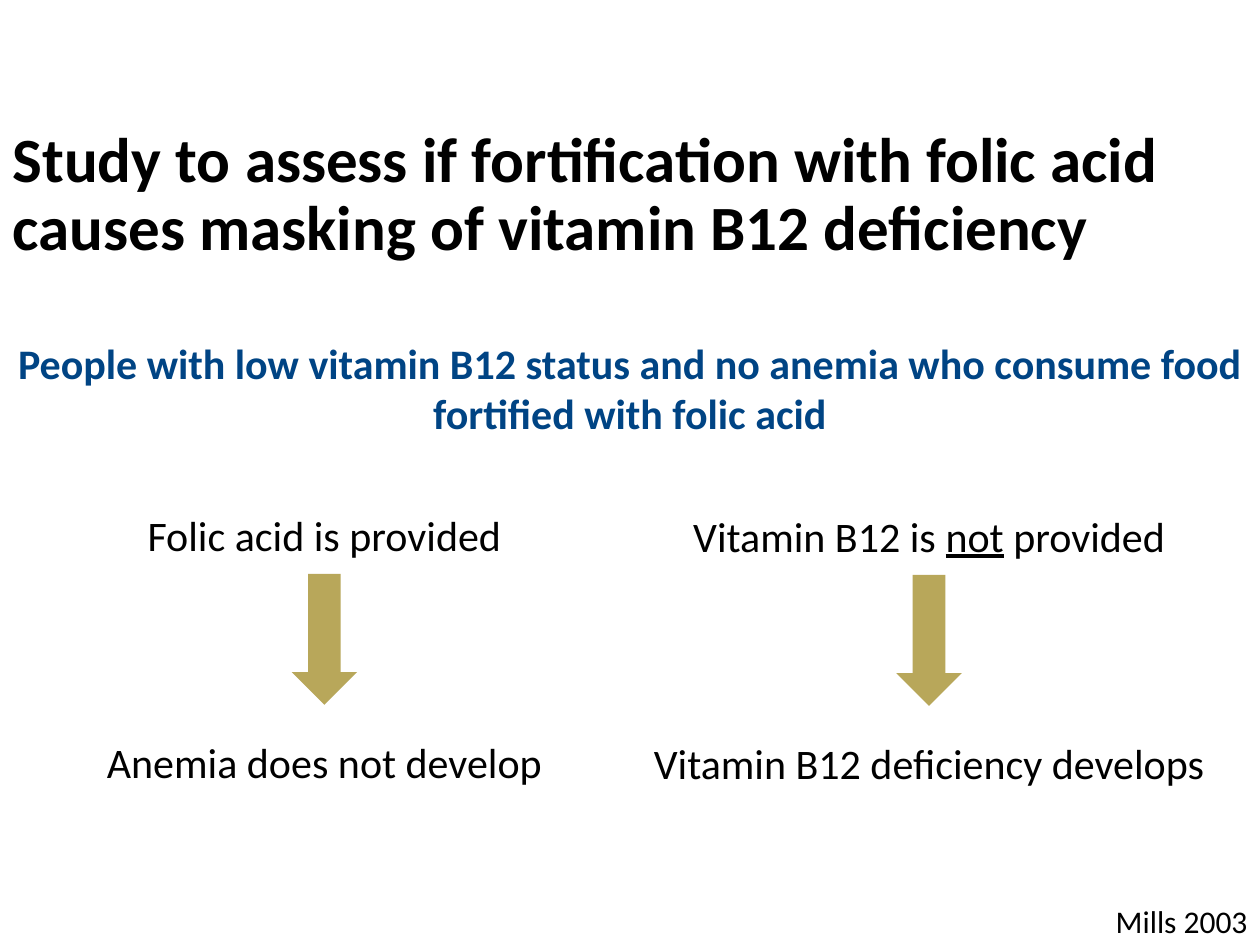
from pptx import Presentation
from pptx.dml.color import RGBColor
from pptx.enum.shapes import MSO_SHAPE as Shape
from pptx.enum.text import MSO_ANCHOR as Anchor, MSO_AUTO_SIZE as AutoSize, PP_ALIGN as Align
from pptx.util import Cm, Pt

FONT = "Calibri"
BLACK, BLUE, GOLD = "000000", "004484", "B8A75A"
LABEL_HEIGHT = 1.27
ARROW_WIDTH, ARROW_HEIGHT = 1.32, 2.64


def color(hex_string):
    return RGBColor.from_string(hex_string)


def format_paragraph(paragraph, size, hex_color, bold, align):
    paragraph.alignment = align
    font = paragraph.font
    font.name, font.size, font.bold = FONT, Pt(size), bold
    font.color.rgb = color(hex_color)


def add_text(slide, box, runs, size=24, hex_color=BLACK, bold=False, align=Align.CENTER):
    """Add one paragraph made of (text, underlined) runs; box is in centimetres."""
    frame = slide.shapes.add_textbox(*map(Cm, box)).text_frame
    frame.word_wrap = True
    frame.auto_size = AutoSize.SHAPE_TO_FIT_TEXT
    paragraph = frame.paragraphs[0]
    for text, underlined in runs:
        run = paragraph.add_run()
        run.text = text
        if underlined:
            run.font.underline = True
    format_paragraph(paragraph, size, hex_color, bold, align)


def add_title(slide, box, text):
    title = slide.shapes.title
    title.left, title.top, title.width, title.height = map(Cm, box)
    frame = title.text_frame
    frame.text = text
    frame.word_wrap = True
    frame.auto_size = AutoSize.NONE
    frame.vertical_anchor = Anchor.MIDDLE
    paragraph = frame.paragraphs[0]
    paragraph.line_spacing = 0.9
    format_paragraph(paragraph, 36, BLACK, True, Align.LEFT)


def add_pathway(slide, center, top, cause, cause_width, effect, effect_width):
    """Stack a cause, a down arrow and its effect on one vertical axis."""
    add_text(slide, (center - cause_width / 2, top, cause_width, LABEL_HEIGHT), cause)
    arrow = slide.shapes.add_shape(
        Shape.DOWN_ARROW, Cm(center - ARROW_WIDTH / 2), Cm(top + 1.43),
        Cm(ARROW_WIDTH), Cm(ARROW_HEIGHT))
    arrow.shadow.inherit = False
    arrow.fill.solid()
    arrow.fill.fore_color.rgb = color(GOLD)
    arrow.line.fill.background()
    add_text(slide, (center - effect_width / 2, top + 4.58, effect_width, LABEL_HEIGHT), effect)


def main():
    presentation = Presentation()
    presentation.slide_width, presentation.slide_height = Cm(25.4), Cm(19.05)
    slide = presentation.slides.add_slide(presentation.slide_layouts[5])

    add_title(slide, (0, 2.11, 25.37, 3.68),
              "Study to assess if fortification with folic acid "
              "causes masking of vitamin B12 deficiency")
    add_text(slide, (0, 6.68, 25.4, 2.31),
             [("People with low vitamin B12 status and no anemia who consume food "
               "fortified with folic acid", False)], hex_color=BLUE, bold=True)
    add_pathway(slide, 6.54, 10.14,
                [("Folic acid is provided", False)], 10.46,
                [("Anemia does not develop", False)], 9.58)
    add_pathway(slide, 18.73, 10.16,
                [("Vitamin B12 is ", False), ("not", True), (" provided", False)], 11.02,
                [("Vitamin B12 deficiency develops", False)], 11.84)
    add_text(slide, (18.42, 18.06, 6.98, 1.02), [("Mills 2003", False)],
             size=18, align=Align.RIGHT)

    presentation.save("out.pptx")


if __name__ == "__main__":
    main()
